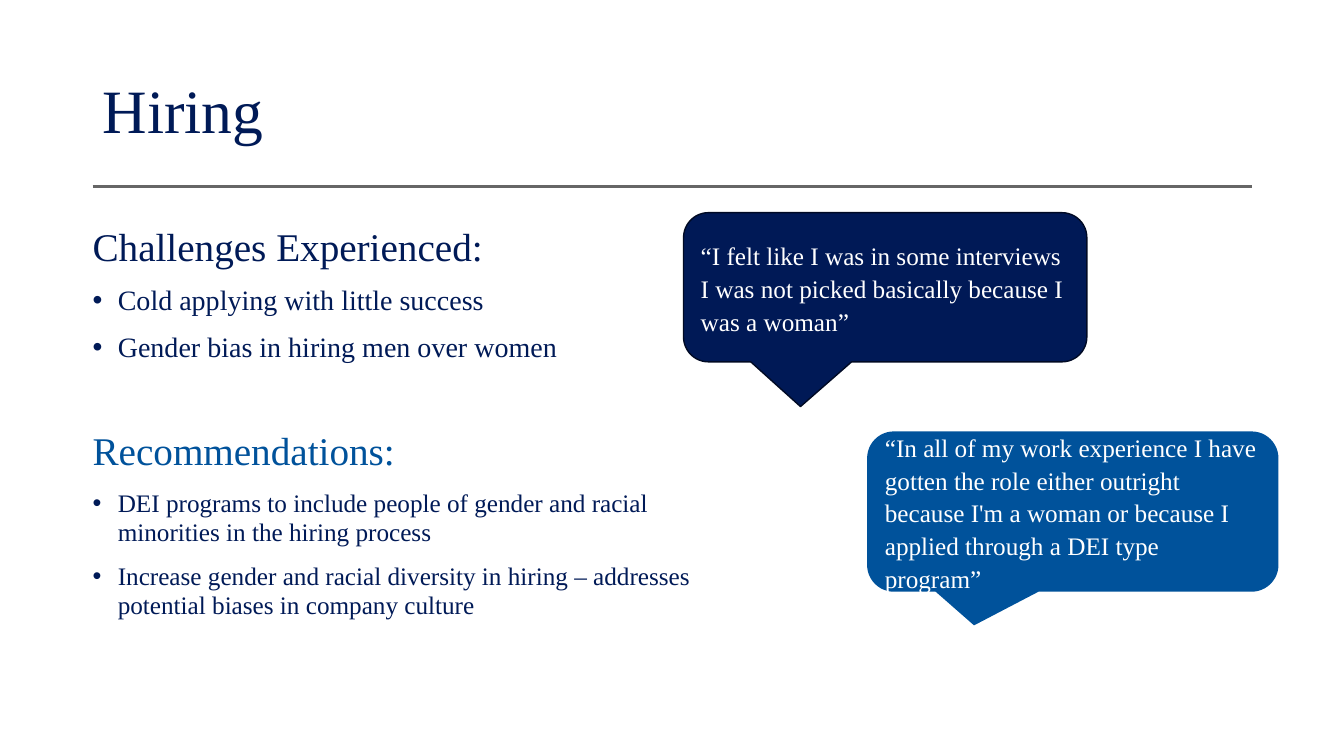
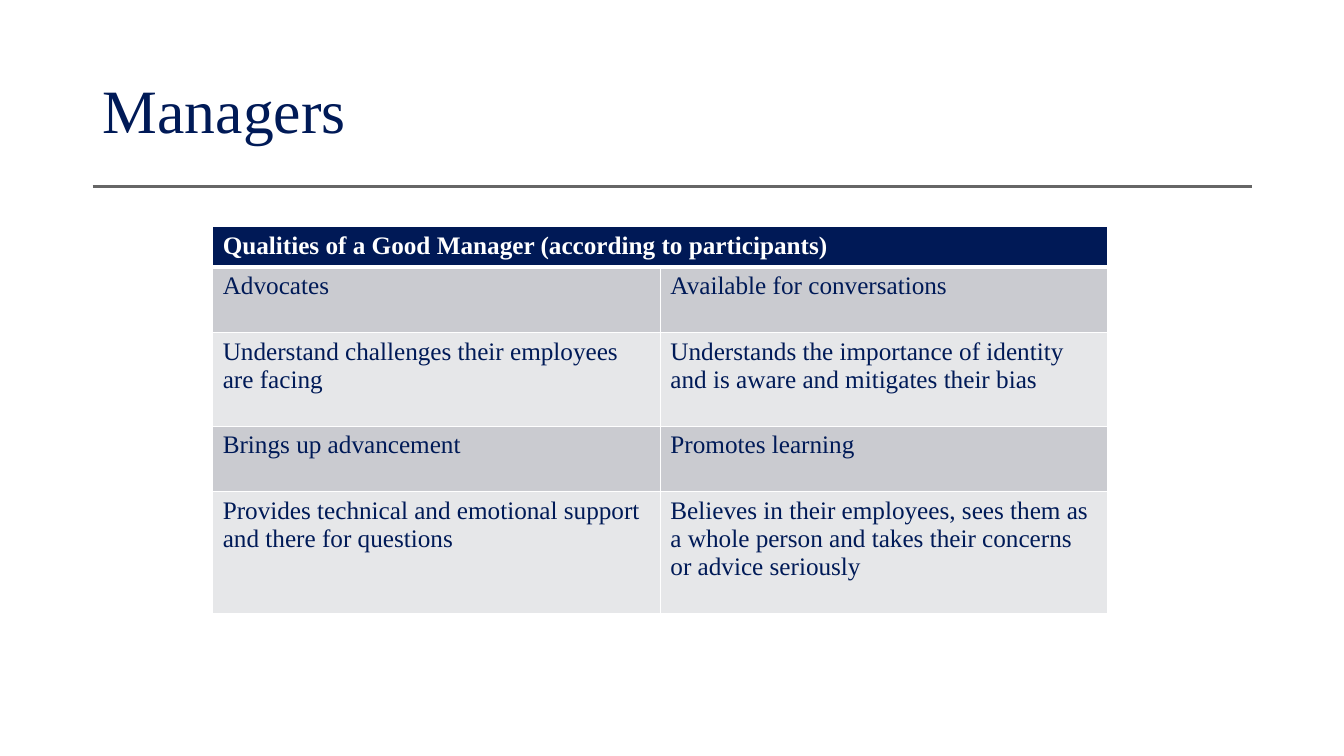
from pptx import Presentation
from pptx.dml.color import RGBColor
from pptx.enum.shapes import MSO_CONNECTOR, MSO_SHAPE
from pptx.enum.text import MSO_ANCHOR, PP_ALIGN
from pptx.oxml.ns import qn
from pptx.util import Inches, Pt
from lxml.etree import SubElement

COLORS = {
    "ink": "001A57",
    "navy": "001956",
    "navy_edge": "000A24",
    "blue": "00529B",
    "rule": "666666",
    "white": "FFFFFF",
    "band_dark": "CACBD0",
    "band_light": "E6E7E9",
}
FONT = "Times New Roman"
TITLE_BOX = (0.92, 0.4, 11.5, 1.45)


def rgb(name):
    return RGBColor.from_string(COLORS[name])


def inches(box):
    return [Inches(value) for value in box]


def add_bullet(paragraph, color):
    properties = paragraph._p.get_or_add_pPr()
    properties.set("marL", str(Inches(0.25)))
    properties.set("indent", str(-Inches(0.25)))
    bullet_color = SubElement(properties, qn("a:buClr"))
    SubElement(bullet_color, qn("a:srgbClr"), val=COLORS[color])
    SubElement(properties, qn("a:buFont"), typeface="Arial")
    SubElement(properties, qn("a:buChar"), char="•")


def write(paragraph, text, size=18, color="ink", bold=False, spacing=None,
          before=0, bullet=False):
    """Fill a paragraph with formatted text."""
    if bullet:
        add_bullet(paragraph, color)
    paragraph.alignment = PP_ALIGN.LEFT
    paragraph.space_before = Pt(before)
    if spacing:
        paragraph.line_spacing = spacing
    run = paragraph.add_run()
    run.text = text
    run.font.name = FONT
    run.font.size = Pt(size)
    run.font.bold = bold
    run.font.color.rgb = rgb(color)


def add_titled_slide(presentation, title):
    """Title with the rule along the bottom of its box."""
    slide = presentation.slides.add_slide(presentation.slide_layouts[5])
    left, top, width, height = inches(TITLE_BOX)
    rule = slide.shapes.add_connector(
        MSO_CONNECTOR.STRAIGHT, left, top + height, left + width, top + height)
    rule.line.color.rgb = rgb("rule")
    rule.line.width = Pt(1.5)
    SubElement(rule._element.spPr, qn("a:effectLst"))

    shape = slide.shapes.title
    shape.left, shape.top, shape.width, shape.height = left, top, width, height
    shape.text_frame.vertical_anchor = MSO_ANCHOR.MIDDLE
    write(shape.text_frame.paragraphs[0], title, size=44, spacing=0.9)
    return slide


def add_section(slide, box, heading, bullets, heading_color, size):
    """Heading followed by a bulleted list."""
    frame = slide.shapes.add_textbox(*inches(box)).text_frame
    frame.word_wrap = True
    write(frame.paragraphs[0], heading, size=28, color=heading_color, spacing=0.97)
    for text in bullets:
        write(frame.add_paragraph(), text, size=size, spacing=0.97,
              before=10, bullet=True)


def add_quote(slide, box, text, fill, tip, edge=None):
    """Speech bubble; tip is the pointer's offset from the centre."""
    shape = slide.shapes.add_shape(
        MSO_SHAPE.ROUNDED_RECTANGULAR_CALLOUT, *inches(box))
    shape.shadow.inherit = False
    for index, value in enumerate((*tip, 0.167)):
        shape.adjustments[index] = value
    shape.fill.solid()
    shape.fill.fore_color.rgb = rgb(fill)
    if edge:
        shape.line.color.rgb = rgb(edge)
        shape.line.width = Pt(1)
    else:
        shape.line.fill.background()
    frame = shape.text_frame
    frame.word_wrap = True
    frame.vertical_anchor = MSO_ANCHOR.MIDDLE
    write(frame.paragraphs[0], text, color="white", spacing=1.08)


def style_cell(cell, fill, bottom=1, top=1):
    """White borders, then the fill, in the order the schema asks for."""
    properties = cell._tc.get_or_add_tcPr()
    for side, width in (("L", 1), ("R", 1), ("T", top), ("B", bottom)):
        line = SubElement(properties, qn(f"a:ln{side}"), w=str(Pt(width)))
        color = SubElement(SubElement(line, qn("a:solidFill")), qn("a:srgbClr"))
        color.set("val", COLORS["white"])
    cell.fill.solid()
    cell.fill.fore_color.rgb = rgb(fill)


def add_banded_table(slide, box, header, rows, heights):
    """Two-column table under one merged header."""
    table = slide.shapes.add_table(len(rows) + 1, 2, *inches(box)).table
    for row, height in zip(table.rows, heights):
        row.height = Inches(height)
    for cell in table.rows[0].cells:
        style_cell(cell, "navy", bottom=3)
    table.cell(0, 0).merge(table.cell(0, 1))
    write(table.cell(0, 0).text_frame.paragraphs[0], header,
          color="white", bold=True)
    for row_index, texts in enumerate(rows, start=1):
        fill = "band_dark" if row_index % 2 else "band_light"
        for column, text in enumerate(texts):
            cell = table.cell(row_index, column)
            style_cell(cell, fill, top=3 if row_index == 1 else 1)
            write(cell.text_frame.paragraphs[0], text)


def build_hiring(presentation):
    slide = add_titled_slide(presentation, "Hiring")
    add_section(
        slide, (0.82, 2.18, 5.23, 1.89), "Challenges Experienced:",
        ["Cold applying with little success",
         "Gender bias in hiring men over women"],
        heading_color="ink", size=20)
    add_quote(
        slide, (6.78, 2.11, 4, 1.48),
        "“I felt like I was in some interviews I was not picked basically "
        "because I was a woman”",
        fill="navy", tip=(-0.21, 0.8), edge="navy_edge")
    add_section(
        slide, (0.82, 4.21, 6.25, 2.1), "Recommendations:",
        ["DEI programs to include people of gender and racial minorities "
         "in the hiring process",
         "Increase gender and racial diversity in hiring – addresses "
         "potential biases in company culture"],
        heading_color="blue", size=18)
    add_quote(
        slide, (8.6, 4.28, 4.08, 1.59),
        "“In all of my work experience I have gotten the role either outright "
        "because I'm a woman or because I applied through a DEI type program”",
        fill="blue", tip=(-0.24, 0.71))


def build_managers(presentation):
    slide = add_titled_slide(presentation, "Managers")
    add_banded_table(
        slide, (2.11, 2.25, 8.88, 3.84),
        "Qualities of a Good Manager (according to participants)",
        [("Advocates", "Available for conversations"),
         ("Understand challenges their employees are facing",
          "Understands the importance of identity and is aware and "
          "mitigates their bias"),
         ("Brings up advancement", "Promotes learning"),
         ("Provides technical and emotional support and there for questions",
          "Believes in their employees, sees them as a whole person and takes "
          "their concerns or advice seriously")],
        heights=(0.4, 0.65, 0.93, 0.65, 1.21))


def main():
    presentation = Presentation()
    presentation.slide_width = Inches(13.33)
    presentation.slide_height = Inches(7.5)
    build_hiring(presentation)
    build_managers(presentation)
    presentation.save("out.pptx")


if __name__ == "__main__":
    main()
